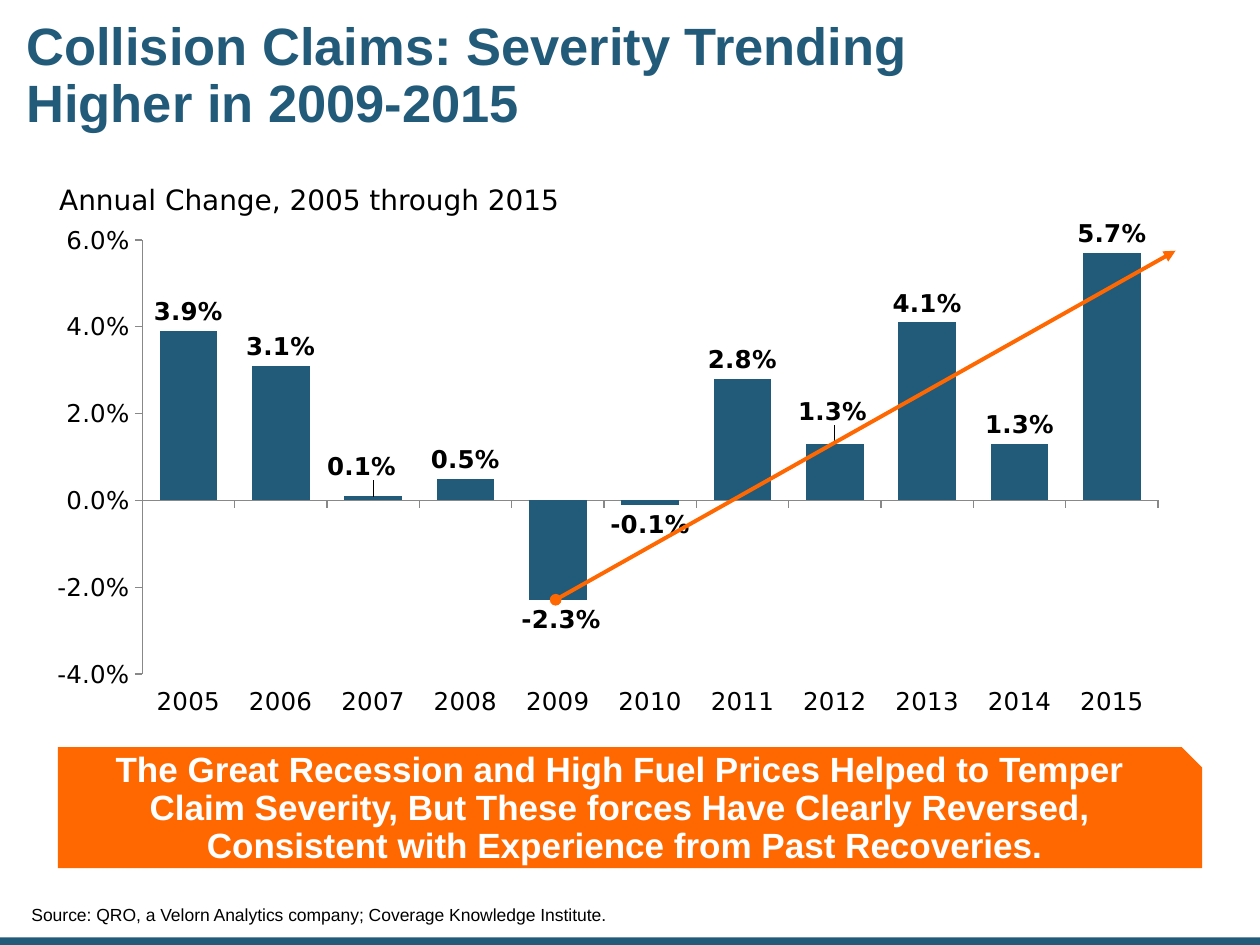
"""Build the collision claims severity slide with its column chart and trend arrow."""
from lxml import etree
from pptx import Presentation
from pptx.chart.data import CategoryChartData
from pptx.dml.color import RGBColor
from pptx.enum.chart import XL_CHART_TYPE, XL_LABEL_POSITION, XL_TICK_LABEL_POSITION, XL_TICK_MARK
from pptx.enum.shapes import MSO_CONNECTOR, MSO_SHAPE
from pptx.enum.text import MSO_ANCHOR, MSO_AUTO_SIZE, PP_ALIGN
from pptx.oxml import parse_xml
from pptx.oxml.ns import nsdecls, qn
from pptx.util import Inches, Pt

BLUE = RGBColor(0x22, 0x5A, 0x7A)
ORANGE = RGBColor(0xFF, 0x68, 0x01)
BLACK = RGBColor(0, 0, 0)
WHITE = RGBColor(0xFF, 0xFF, 0xFF)
GRAY = RGBColor(0x88, 0x88, 0x88)

LEFT, CENTER = PP_ALIGN.LEFT, PP_ALIGN.CENTER
TOP, MIDDLE, BOTTOM = MSO_ANCHOR.TOP, MSO_ANCHOR.MIDDLE, MSO_ANCHOR.BOTTOM
OUTSIDE_END = XL_LABEL_POSITION.OUTSIDE_END

COLUMNS, ROWS = 100, 75
CELL = Inches(0.1)
TITLE_ONLY = 5

YEARS = [str(year) for year in range(2005, 2016)]
CHANGES = [0.039, 0.031, 0.001, 0.005, -0.023, -0.001, 0.028, 0.013, 0.041, 0.013, 0.057]
PLOT_AREA = {"x": 0.087, "y": 0.068, "w": 0.889, "h": 0.796}
LABEL_SHIFTS = {"2007": (-0.01, -0.02), "2009": (0.003, 0), "2012": (-0.002, -0.025)}


def cells(*lengths):
    """Convert grid cells to slide lengths."""
    return [round(length * CELL) for length in lengths]


def write(shape, text, font_name, size, color, bold=False,
          align=LEFT, anchor=TOP, insets=(0.5, 0.5, 0.5, 0.5)):
    """Put one formatted paragraph into a shape."""
    frame = shape.text_frame
    frame.text = text
    frame.word_wrap = True
    frame.auto_size = MSO_AUTO_SIZE.NONE
    frame.vertical_anchor = anchor
    (frame.margin_left, frame.margin_top,
     frame.margin_right, frame.margin_bottom) = cells(*insets)
    paragraph = frame.paragraphs[0]
    paragraph.alignment = align
    paragraph.line_spacing = 0.9
    font = paragraph.font
    font.name, font.size, font.bold = font_name, Pt(size), bold
    font.color.rgb = color


def add_title(slide, text):
    """Place and fill the title placeholder."""
    title = slide.shapes.title
    title.left, title.top, title.width, title.height = cells(1.6, 0.9, 92.5, 10.4)
    write(title, text, "Arial", 30, BLUE, bold=True, anchor=MIDDLE)


def add_text(slide, box, text, font_name, size, **style):
    """Add a black text box."""
    write(slide.shapes.add_textbox(*cells(*box)), text, font_name, size, BLACK, **style)


def add_block(slide, preset, box, color):
    """Add a flat filled shape without an outline."""
    shape = slide.shapes.add_shape(preset, *cells(*box))
    shape.shadow.inherit = False
    shape.fill.solid()
    shape.fill.fore_color.rgb = color
    shape.line.fill.background()
    return shape


def manual_layout(**values):
    """Return a chart layout element with the given settings."""
    settings = "".join(f'<c:{name} val="{value}"/>' for name, value in values.items())
    return parse_xml(f'<c:layout {nsdecls("c")}><c:manualLayout>{settings}'
                     '</c:manualLayout></c:layout>')


def style_axes(chart):
    """Set the scale, ticks and lines of both axes."""
    value_axis, category_axis = chart.value_axis, chart.category_axis
    value_axis.minimum_scale, value_axis.maximum_scale = -0.04, 0.06
    value_axis.major_unit = 0.02
    value_axis.tick_labels.number_format = "0.0%"
    value_axis.tick_labels.number_format_is_linked = False
    category_axis.tick_label_position = XL_TICK_LABEL_POSITION.LOW
    for axis in (value_axis, category_axis):
        axis.has_major_gridlines = False
        axis.major_tick_mark = XL_TICK_MARK.OUTSIDE
        axis.format.line.color.rgb = GRAY
        axis.format.line.width = Pt(0.75)


def style_labels(plot):
    """Show bold value labels and shift those that need room."""
    plot.has_data_labels = True
    labels = plot.data_labels
    labels.show_value = True
    labels.number_format, labels.number_format_is_linked = "0.0%", False
    labels.position = OUTSIDE_END
    labels.font.bold, labels.font.size = True, Pt(14)
    for year, (x, y) in LABEL_SHIFTS.items():
        index = YEARS.index(year)
        label = plot.series[0].points[index].data_label
        label.font.bold, label.font.size = True, Pt(14)
        label.position = OUTSIDE_END
    series_labels = plot.series[0].data_labels
    series_labels.show_value = True
    series_labels.number_format, series_labels.number_format_is_linked = "0.0%", False
    series_labels.position = OUTSIDE_END
    series_labels.font.bold, series_labels.font.size = True, Pt(14)
    for element in plot.series[0].data_labels._element.findall(qn("c:dLbl")):
        index = element.find(qn("c:idx"))
        x, y = LABEL_SHIFTS[YEARS[int(index.get("val"))]]
        index.addnext(manual_layout(x=x, y=y))


def add_change_chart(slide, box):
    """Add the column chart of annual changes."""
    data = CategoryChartData(number_format="0.0%")
    data.categories = YEARS
    data.add_series("Series 1", CHANGES)
    chart = slide.shapes.add_chart(XL_CHART_TYPE.COLUMN_CLUSTERED, *cells(*box), data).chart
    chart.has_legend = chart.has_title = False
    chart.font.name, chart.font.size = "DejaVu Sans", Pt(14)
    chart.font.color.rgb = BLACK
    plot = chart.plots[0]
    plot.gap_width = 60
    plot.vary_by_categories = False
    series = plot.series[0]
    series.invert_if_negative = False
    series.format.fill.solid()
    series.format.fill.fore_color.rgb = BLUE
    style_axes(chart)
    style_labels(plot)
    plot_area = chart._chartSpace.chart.plotArea
    for layout in plot_area.findall(qn("c:layout")):
        plot_area.remove(layout)
    plot_area.insert(0, manual_layout(layoutTarget="inner", xMode="edge", yMode="edge",
                                      **PLOT_AREA))


def add_trend_arrow(slide, start, end):
    """Add an arrow that starts with a dot."""
    arrow = slide.shapes.add_connector(MSO_CONNECTOR.STRAIGHT, *cells(*start, *end))
    arrow.line.color.rgb = ORANGE
    arrow.line.width = Pt(2.25)
    line = arrow.line._get_or_add_ln()
    for tag, kind in (("a:headEnd", "oval"), ("a:tailEnd", "triangle")):
        etree.SubElement(line, qn(tag), type=kind)
    etree.SubElement(arrow._element.spPr, qn("a:effectLst"))


def main():
    """Build and save the slide."""
    presentation = Presentation()
    presentation.slide_width, presentation.slide_height = cells(COLUMNS, ROWS)
    slide = presentation.slides.add_slide(presentation.slide_layouts[TITLE_ONLY])
    add_block(slide, MSO_SHAPE.RECTANGLE, (0, ROWS - 0.6, COLUMNS, 0.6), BLUE)
    add_title(slide, "Collision Claims: Severity Trending\vHigher in 2009-2015")
    add_text(slide, (4.2, 14.3, 92.5, 4.3), "Annual Change, 2005 through 2015",
             "DejaVu Sans", 16)
    banner = add_block(slide, MSO_SHAPE.SNIP_1_RECTANGLE, (4.6, 59.3, 90.8, 9.6), ORANGE)
    write(banner, "The Great Recession and High Fuel Prices Helped to Temper \v"
                  "Claim Severity, But These forces Have Clearly Reversed, \v"
                  "Consistent with Experience from Past Recoveries.",
          "Arial", 20, WHITE, bold=True, align=CENTER, anchor=MIDDLE, insets=(1, 0.5, 1, 1))
    add_change_chart(slide, (3.4, 16.1, 90.7, 43.3))
    add_trend_arrow(slide, (44.1, 47.6), (93.3, 19.9))
    add_text(slide, (2.5, 68.9, 84, 4.5),
             "Source: QRO, a Velorn Analytics company; Coverage Knowledge Institute.",
             "Arial", 10, anchor=BOTTOM, insets=(0, 0, 0, 0))
    presentation.save("out.pptx")


if __name__ == "__main__":
    main()
